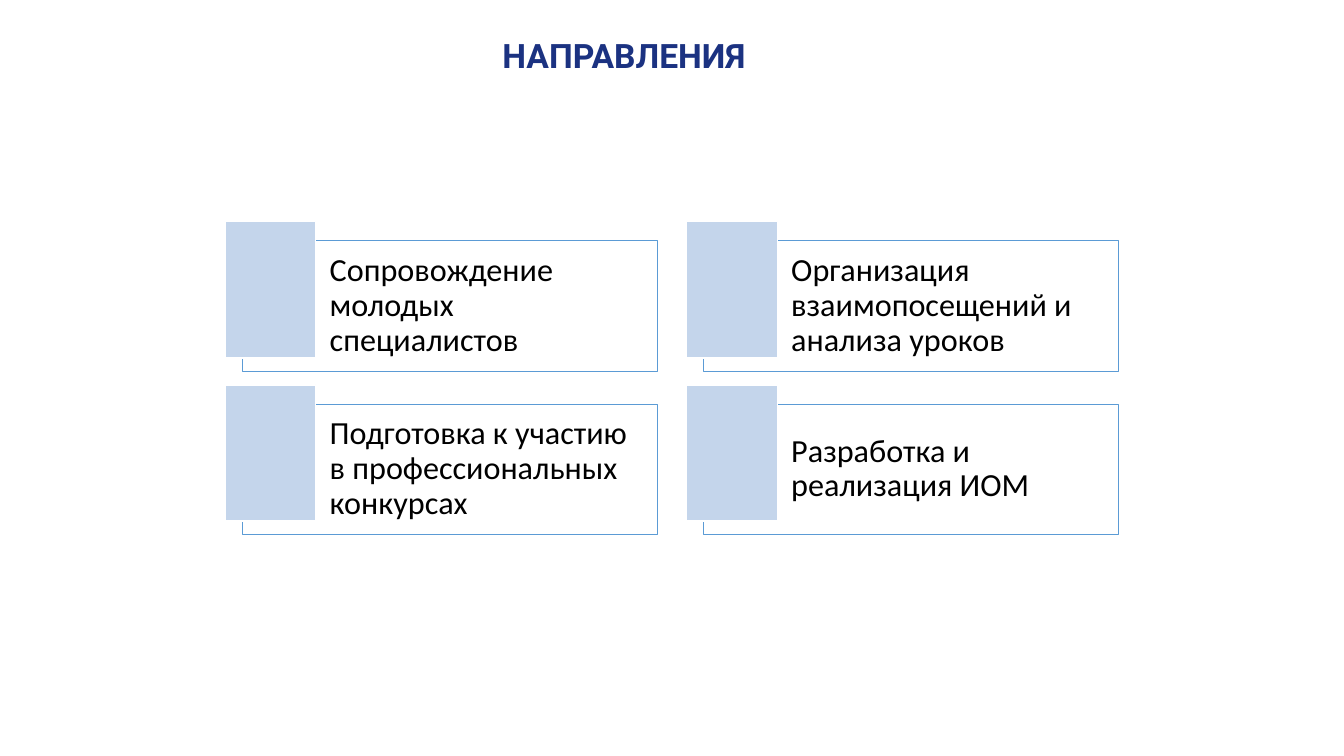
from dataclasses import dataclass

from lxml.etree import SubElement
from pptx import Presentation
from pptx.dml.color import RGBColor
from pptx.enum.shapes import MSO_SHAPE as Shape
from pptx.enum.text import MSO_ANCHOR as Anchor, MSO_AUTO_SIZE as AutoSize, PP_ALIGN as Align
from pptx.oxml.ns import qn
from pptx.util import Cm, Pt


@dataclass(frozen=True)
class Theme:
    title_color: RGBColor = RGBColor(0x1B, 0x32, 0x81)
    text_color: RGBColor = RGBColor(0, 0, 0)
    white: RGBColor = RGBColor(0xFF, 0xFF, 0xFF)
    card_line: RGBColor = RGBColor(0x5B, 0x9B, 0xD5)
    marker_fill: RGBColor = RGBColor(0xC4, 0xD5, 0xEB)
    title_font: str = "Roboto"
    body_font: str = "Calibri"
    title_size: Pt = Pt(24)
    body_size: Pt = Pt(23)


THEME = Theme()

# Card grid, in centimetres
GRID_LEFT, GRID_TOP = 6.1, 6.07
STEP_X, STEP_Y = 11.63, 4.11
CARD_WIDTH, CARD_HEIGHT = 10.46, 3.28
MARKER_WIDTH, MARKER_HEIGHT = 2.29, 3.43
MARKER_SHIFT_X, MARKER_SHIFT_Y = 0.43, 0.48
COLUMNS = 2

DIRECTIONS = [
    "Сопровождение молодых специалистов",
    "Организация взаимопосещений и анализа уроков",
    "Подготовка к участию в профессиональных конкурсах",
    "Разработка и реализация ИОМ",
]


def set_margins(frame, left, top, right, bottom):
    frame.margin_left, frame.margin_top = Cm(left), Cm(top)
    frame.margin_right, frame.margin_bottom = Cm(right), Cm(bottom)


def add_text(para, text, font_name, size, color, bold=False):
    run = para.add_run()
    run.text = text
    run.font.name, run.font.size, run.font.bold = font_name, size, bold
    run.font.color.rgb = color


def add_title(page, text):
    title = page.shapes.title
    title.left, title.top, title.width, title.height = Cm(4.93), Cm(0.86), Cm(21.59), Cm(2.51)
    frame = title.text_frame
    frame.word_wrap = True
    frame.auto_size = AutoSize.NONE
    frame.vertical_anchor = Anchor.TOP
    set_margins(frame, 0, 0, 0, 0)
    para = frame.paragraphs[0]
    para.alignment = Align.CENTER
    para.line_spacing = 1.01
    add_text(para, text, THEME.title_font, THEME.title_size, THEME.title_color, bold=True)


def add_box(page, left, top, width, height, fill, line, line_width):
    box = page.shapes.add_shape(Shape.RECTANGLE, Cm(left), Cm(top), Cm(width), Cm(height))
    box.shadow.inherit = False
    box.fill.solid()
    box.fill.fore_color.rgb = fill
    box.line.color.rgb = line
    box.line.width = Pt(line_width)
    return box


def set_opacity(box, percent):
    color = box.fill._xPr.find(qn("a:solidFill"))[0]
    SubElement(color, qn("a:alpha")).set("val", str(percent * 1000))


def add_card(page, left, top, text):
    # Outlined card with its text
    card = add_box(page, left, top, CARD_WIDTH, CARD_HEIGHT, THEME.white, THEME.card_line, 0.5)
    set_opacity(card, 40)
    frame = card.text_frame
    frame.word_wrap = True
    frame.vertical_anchor = Anchor.MIDDLE
    set_margins(frame, 2.21, 0.25, 0.25, 0.25)
    para = frame.paragraphs[0]
    para.alignment = Align.LEFT
    para.line_spacing = 0.9
    add_text(para, text, THEME.body_font, THEME.body_size, THEME.text_color)

    # Marker over the upper left corner
    add_box(page, left - MARKER_SHIFT_X, top - MARKER_SHIFT_Y, MARKER_WIDTH, MARKER_HEIGHT,
            THEME.marker_fill, THEME.white, 1)


def main():
    deck = Presentation()
    deck.slide_width, deck.slide_height = Cm(33.87), Cm(19.05)
    page = deck.slides.add_slide(deck.slide_layouts.get_by_name("Title Only"))

    add_title(page, "НАПРАВЛЕНИЯ")
    for index, text in enumerate(DIRECTIONS):
        row, column = divmod(index, COLUMNS)
        add_card(page, GRID_LEFT + column * STEP_X, GRID_TOP + row * STEP_Y, text)

    deck.save("out.pptx")


if __name__ == "__main__":
    main()
